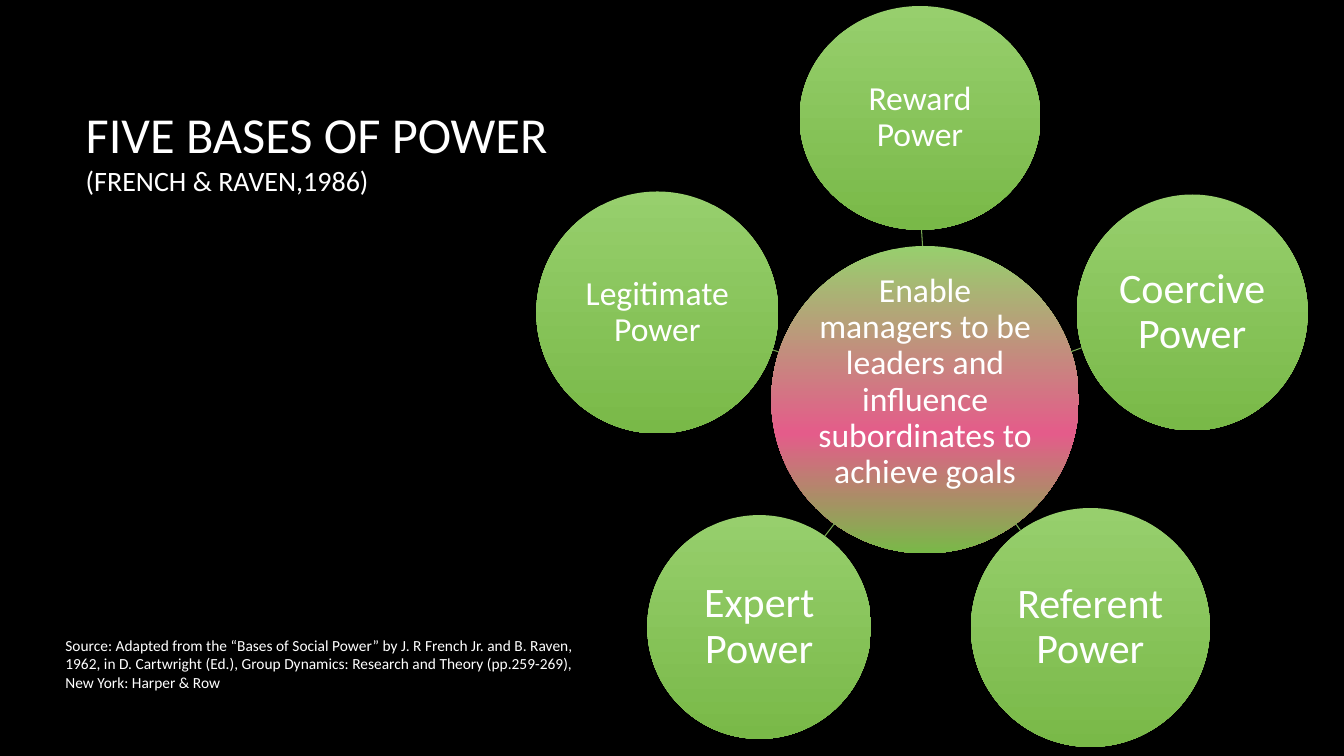
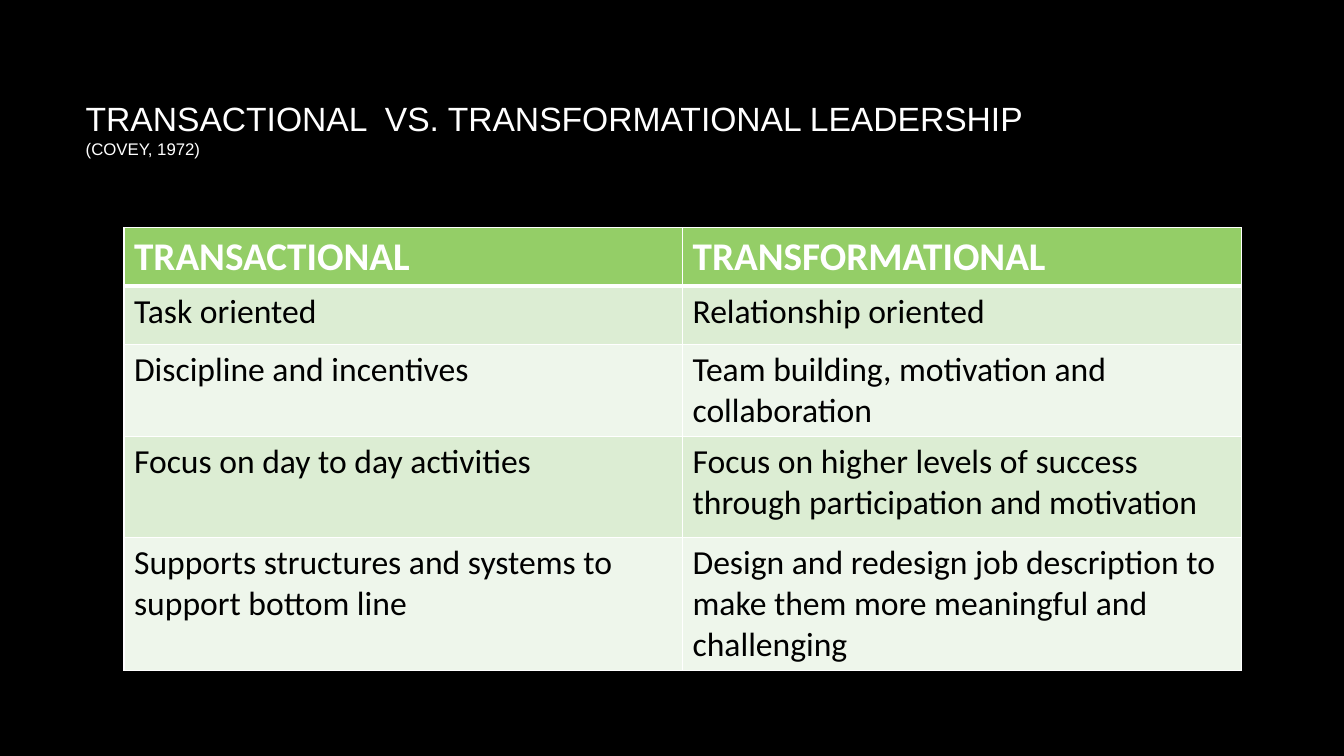
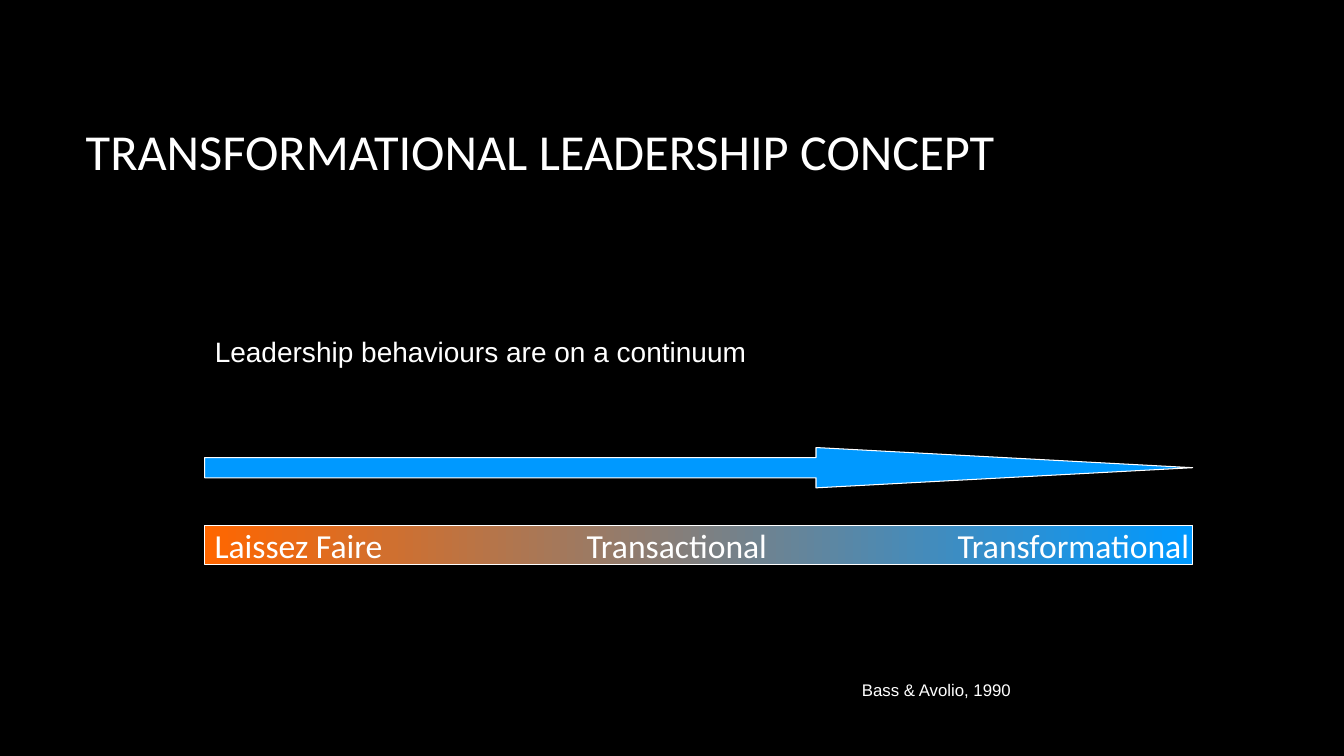
from lxml import etree
from pptx import Presentation
from pptx.dml.color import RGBColor
from pptx.enum.shapes import MSO_CONNECTOR, MSO_SHAPE
from pptx.enum.text import MSO_ANCHOR, MSO_AUTO_SIZE, PP_ALIGN
from pptx.oxml.ns import qn
from pptx.util import Emu, Pt

LEFT, CENTER = PP_ALIGN.LEFT, PP_ALIGN.CENTER
TOP, MIDDLE = MSO_ANCHOR.TOP, MSO_ANCHOR.MIDDLE
NO_AUTOFIT = MSO_AUTO_SIZE.NONE
ELLIPSE, RECTANGLE, RIGHT_ARROW = MSO_SHAPE.OVAL, MSO_SHAPE.RECTANGLE, MSO_SHAPE.RIGHT_ARROW
STRAIGHT = MSO_CONNECTOR.STRAIGHT

EMU_PER_PX = 9144  # 100 px to the inch
TITLE_ONLY, TITLE_AND_CONTENT = 5, 1

BLACK, WHITE = "000000", "FFFFFF"
LIGHT_GREEN, DARK_GREEN, SPOKE_GREEN = "97CF6D", "79B948", "77A552"
PINK, ORANGE, BLUE = "E45C8A", "FF6600", "0099FF"
HEADER_GREEN, ROW_GREENS = "94CE67", ("DCEDD3", "EEF6EB")
GREEN_STOPS = [(0, LIGHT_GREEN), (100, DARK_GREEN)]
HUB_STOPS = [(0, LIGHT_GREEN), (61, PINK), (100, DARK_GREEN)]


def px(length):
    return Emu(length * EMU_PER_PX)


def color(hex_value):
    return RGBColor.from_string(hex_value)


def child(parent, tag, **attributes):
    return etree.SubElement(parent, qn(tag), attributes)


class Deck:
    """Holds the shared style and the slide being built."""

    def __init__(self):
        self.presentation = Presentation()
        self.presentation.slide_width = px(1333)
        self.presentation.slide_height = px(750)
        background = self.presentation.slide_master.background.fill
        background.solid()
        background.fore_color.rgb = color(BLACK)
        self.slide = None

    def new_slide(self, layout):
        layouts = self.presentation.slide_layouts
        self.slide = self.presentation.slides.add_slide(layouts[layout])

    def place(self, shape, box):
        shape.left, shape.top, shape.width, shape.height = map(px, box)

    def frame(self, shape, anchor, insets=(10, 5, 10, 5), wrap=True):
        """Set up the text frame; insets run left, top, right, bottom."""
        text_frame = shape.text_frame
        text_frame.auto_size = NO_AUTOFIT
        text_frame.word_wrap = wrap
        text_frame.vertical_anchor = anchor
        (text_frame.margin_left, text_frame.margin_top,
         text_frame.margin_right, text_frame.margin_bottom) = map(px, insets)
        return text_frame

    def set_text(self, text_frame, text, *sizes, font="Calibri", ink=WHITE,
                 bold=False, align=LEFT, spacing=1.0):
        """Fill in one paragraph; each size belongs to one line of the text."""
        text_frame.text = text
        paragraph = text_frame.paragraphs[0]
        paragraph.alignment = align
        paragraph.line_spacing = spacing
        paragraph.space_before = Pt(0)
        for run, size in zip(paragraph.runs, sizes):
            run.font.name = font
            run.font.size = Pt(size)
            run.font.bold = bold
            run.font.color.rgb = color(ink)
        return paragraph

    def title(self, text, *sizes, font="Calibri", bottom_inset=5):
        shape = self.slide.shapes.title
        self.place(shape, (75, 67, 1108, 159))
        text_frame = self.frame(shape, MIDDLE, (10, 10, 10, bottom_inset))
        self.set_text(text_frame, text, *sizes, font=font)

    def body(self, text, box, size, font, top_inset):
        shape = self.slide.placeholders[1]
        self.place(shape, box)
        text_frame = self.frame(shape, TOP, (10, top_inset, 10, 5))
        paragraph = self.set_text(text_frame, text, size, font=font)
        properties = paragraph._p.get_or_add_pPr()
        properties.set("marL", "0")
        properties.set("indent", "0")
        child(properties, "a:buNone")

    def text(self, text, box, size, font="Calibri", spacing=1.0, wrap=True):
        shape = self.slide.shapes.add_textbox(*map(px, box))
        text_frame = self.frame(shape, TOP, wrap=wrap)
        self.set_text(text_frame, text, size, font=font, spacing=spacing)

    def shape(self, kind, box, fill=None, line=None):
        shape = self.slide.shapes.add_shape(kind, *map(px, box))
        shape.shadow.inherit = False
        if fill:
            shape.fill.solid()
            shape.fill.fore_color.rgb = color(fill)
        if line:
            shape.line.color.rgb = color(line)
            shape.line.width = Pt(0.75)
        else:
            shape.line.fill.background()
        return shape

    def gradient(self, shape, stops, angle):
        """Fill with (percent, colour) stops; 90 degrees runs downwards."""
        shape.fill.gradient()
        shape.fill.gradient_angle = -angle % 360
        stop_list = shape._element.spPr.find(qn("a:gradFill")).find(qn("a:gsLst"))
        for stop in list(stop_list):
            stop_list.remove(stop)
        for percent, hex_value in stops:
            stop = child(stop_list, "a:gs", pos=str(percent * 1000))
            child(stop, "a:srgbClr", val=hex_value)

    def circle(self, text, box, size, stops=GREEN_STOPS, bottom_inset=2):
        circle = self.shape(ELLIPSE, box)
        self.gradient(circle, stops, 90)
        text_frame = self.frame(circle, MIDDLE, (0, 2, 0, bottom_inset))
        self.set_text(text_frame, text, size, align=CENTER, spacing=0.9)

    def spoke(self, ends):
        line = self.slide.shapes.add_connector(STRAIGHT, *map(px, ends))
        line.line.color.rgb = color(SPOKE_GREEN)
        line.line.width = Pt(0.75)
        child(line._element.spPr, "a:effectLst")

    def arrow(self, box, head_ratio):
        arrow = self.shape(RIGHT_ARROW, box, BLUE, WHITE)
        arrow.adjustments[0] = 0.5
        arrow.adjustments[1] = head_ratio

    def scale_bar(self, labels, box, tab_stops, size):
        """Draw a gradient bar whose labels start at the tab stops."""
        bar = self.shape(RECTANGLE, box, line=WHITE)
        self.gradient(bar, [(0, ORANGE), (100, BLUE)], 0)
        text_frame = self.frame(bar, MIDDLE, (10, 0, 0, 0))
        paragraph = self.set_text(text_frame, "\t".join(labels), size)
        tab_list = child(paragraph._p.get_or_add_pPr(), "a:tabLst")
        for position in tab_stops:
            child(tab_list, "a:tab", pos=str(px(position)), algn="l")

    def borders(self, cell, **widths):
        properties = cell._tc.get_or_add_tcPr()
        for side in "LRTB":
            width = Pt(widths.get(side, 1))
            line = child(properties, f"a:ln{side}", w=str(width))
            child(child(line, "a:solidFill"), "a:srgbClr", val=WHITE)

    def table(self, rows, left, top, column_width, row_heights):
        columns = len(rows[0])
        box = (left, top, column_width * columns, sum(row_heights))
        table = self.slide.shapes.add_table(len(rows), columns, *map(px, box)).table
        for row, height in zip(table.rows, row_heights):
            row.height = px(height)
        for row_index, row in enumerate(rows):
            header = row_index == 0
            fill = HEADER_GREEN if header else ROW_GREENS[(row_index - 1) % 2]
            for column_index, text in enumerate(row):
                cell = table.cell(row_index, column_index)
                self.borders(cell, B=3 if header else 1, T=3 if row_index == 1 else 1)
                cell.fill.solid()
                cell.fill.fore_color.rgb = color(fill)
                self.set_text(cell.text_frame, text, 28 if header else 24,
                              ink=WHITE if header else BLACK, bold=header)


def power_bases(deck):
    deck.new_slide(TITLE_ONLY)
    deck.title("FIVE BASES OF POWER\v(FRENCH & RAVEN,1986)", 36, 20)
    deck.circle("Enable managers to be leaders and influence subordinates to achieve goals",
                (765, 244, 305, 305), 24, HUB_STOPS, bottom_inset=37)
    bases = [
        ("Reward Power", (793, 6, 239, 222), 24, (915, 244, 914, 228)),
        ("Coercive Power", (1068, 193, 229, 234), 30, (1062, 349, 1073, 345)),
        ("Referent Power", (963, 504, 237, 237), 30, (1007, 519, 1012, 526)),
        ("Expert Power", (642, 511, 222, 222), 30, (828, 519, 818, 532)),
        ("Legitimate Power", (532, 190, 240, 240), 24, (772, 349, 766, 347)),
    ]
    for name, box, size, spoke_ends in bases:
        deck.spoke(spoke_ends)
        deck.circle(name, box, size)
    deck.text("Source: Adapted from the “Bases of Social Power” by J. R French Jr. and "
              "B. Raven, 1962, in D. Cartwright (Ed.), Group Dynamics: Research and Theory "
              "(pp.259-269), New York: Harper & Row", (55, 626, 552, 66), 11)


def leadership_comparison(deck):
    deck.new_slide(TITLE_ONLY)
    deck.title("TRANSACTIONAL  VS. TRANSFORMATIONAL LEADERSHIP\v(COVEY, 1972)", 24, 12,
               font="Arial", bottom_inset=48)
    rows = [
        ("TRANSACTIONAL", "TRANSFORMATIONAL"),
        ("Task oriented", "Relationship oriented"),
        ("Discipline and incentives", "Team building, motivation and collaboration"),
        ("Focus on day to day activities",
         "Focus on higher levels of success through participation and motivation"),
        ("Supports structures and systems to support bottom line",
         "Design and redesign job description to make them more meaningful and challenging"),
    ]
    deck.table(rows, 123, 226, 554, (58, 58, 91, 100, 132))


def leadership_continuum(deck):
    deck.new_slide(TITLE_AND_CONTENT)
    deck.title("TRANSFORMATIONAL LEADERSHIP CONCEPT", 36)
    deck.body("Leadership behaviours are on a continuum", (203, 263, 930, 450), 20,
              "Arial", top_inset=69)
    deck.arrow((203, 444, 980, 40), 9.34)
    deck.scale_bar(("Laissez Faire", "Transactional", "Transformational"),
                   (203, 521, 980, 39), (369, 737), 24)
    deck.text("Bass & Avolio, 1990", (845, 673, 169, 26), 12, "Arial", 0.8, wrap=False)


def main():
    deck = Deck()
    power_bases(deck)
    leadership_comparison(deck)
    leadership_continuum(deck)
    deck.presentation.save("out.pptx")


if __name__ == "__main__":
    main()
